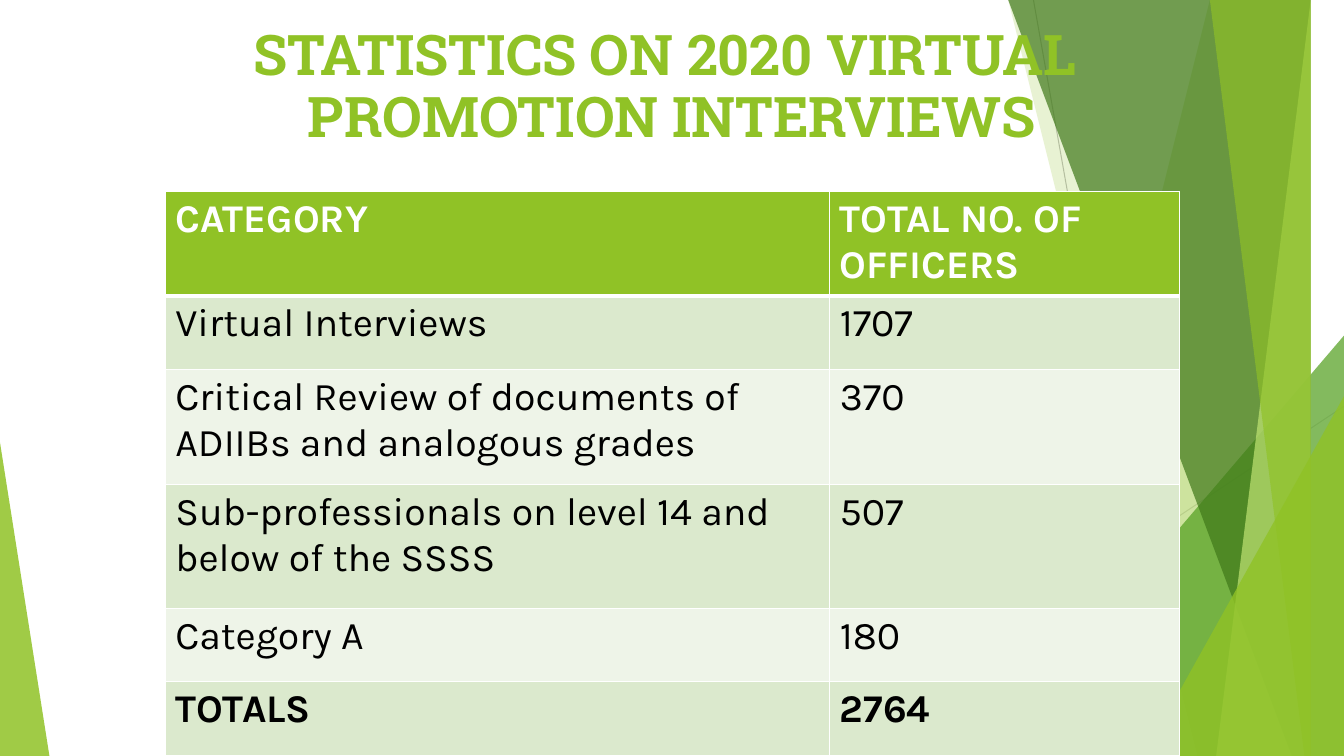
from lxml.etree import SubElement
from pptx import Presentation
from pptx.dml.color import RGBColor
from pptx.enum.shapes import MSO_CONNECTOR, MSO_SHAPE
from pptx.enum.text import MSO_ANCHOR, PP_ALIGN
from pptx.oxml import parse_xml
from pptx.oxml.ns import nsdecls, qn
from pptx.util import Inches, Pt

WIDTH, HEIGHT = 13.33, 7.5
BLEED_TOP = -0.01
COLORS = {
    "green": "90C226",
    "leaf": "54A021",
    "forest": "3F7819",
    "lime": "C0E474",
    "band_dark": "DBE9CD",
    "band_light": "EEF4E8",
    "line_dark": "BFBFBF",
    "line_light": "D9D9D9",
    "white": "FFFFFF",
    "black": "000000",
}
ROWS = [
    ("CATEGORY", "TOTAL NO. OF OFFICERS"),
    ("Virtual Interviews", "1707"),
    ("Critical Review of documents of ADIIBs and analogous grades", "370"),
    ("Sub-professionals on level 14 and below of the SSSS", "507"),
    ("Category A", "180"),
    ("TOTALS", "2764"),
]
ROW_HEIGHTS = [1.01, 0.73, 1.14, 1.23, 0.73, 0.73]
COLUMN_WIDTHS = [6.59, 3.47]


def rgb(name):
    return RGBColor.from_string(COLORS[name])


def add_line(page, start, end, color):
    line = page.shapes.add_connector(
        MSO_CONNECTOR.STRAIGHT, *[Inches(value) for value in (*start, *end)])
    line.line.color.rgb = rgb(color)
    line.line.width = Pt(0.75)
    SubElement(line.element.spPr, qn("a:effectLst"))


def paint(shape, color, opacity):
    """Give a shape a see-through fill with no outline or shadow."""
    shape.shadow.inherit = False
    shape.line.fill.background()
    shape.fill.solid()
    shape.fill.fore_color.rgb = rgb(color)
    fill_color = shape.element.spPr.find(qn("a:solidFill"))[0]
    SubElement(fill_color, qn("a:alpha"), val=str(opacity * 1000))


def add_panel(page, top_x, bottom_x, color, opacity):
    """Add a slanted panel that reaches the right edge of the slide."""
    outline = page.shapes.build_freeform(top_x, BLEED_TOP, scale=Inches(1))
    outline.add_line_segments(
        [(WIDTH, BLEED_TOP), (WIDTH, HEIGHT), (bottom_x, HEIGHT)], close=True)
    paint(outline.convert_to_shape(), color, opacity)


def add_corner(page, left, top, width, apex, color, opacity):
    """Add a triangle standing on the bottom edge of the slide."""
    triangle = page.shapes.add_shape(
        MSO_SHAPE.ISOSCELES_TRIANGLE, Inches(left), Inches(top),
        Inches(width), Inches(HEIGHT - top))
    triangle.adjustments[0] = apex
    paint(triangle, color, opacity)


def write(frame, text, font, size, color, bold=False, align=PP_ALIGN.LEFT,
          spacing=None):
    para = frame.paragraphs[0]
    para.text = text
    para.alignment = align
    para.line_spacing = spacing
    for span in para.runs:
        span.font.name = font
        span.font.size = Pt(size)
        span.font.bold = bold
        span.font.color.rgb = rgb(color)
    return para


def line_xml(tag, points):
    return parse_xml(
        f'<a:{tag} {nsdecls("a")} w="{Pt(points)}"><a:solidFill>'
        f'<a:srgbClr val="{COLORS["white"]}"/></a:solidFill></a:{tag}>')


def add_title(page, text):
    box = page.shapes.add_textbox(
        Inches(0), Inches(0.21), Inches(WIDTH), Inches(1.64))
    frame = box.text_frame
    frame.word_wrap = True
    frame.vertical_anchor = MSO_ANCHOR.TOP
    para = write(frame, text, font="Roboto Slab", size=40, color="green",
                 bold=True, align=PP_ALIGN.CENTER, spacing=0.92)
    for span in para.runs:
        span.font.language_id = None
        span.font.fill.solid()
        span.font.color.rgb = rgb("green")
        span.font._element.insert(0, line_xml("ln", 0.75))


def style_cell(cell, fill, top, bottom):
    cell.fill.solid()
    cell.fill.fore_color.rgb = rgb(fill)
    properties = cell._tc.get_or_add_tcPr()
    borders = {"lnL": 1, "lnR": 1, "lnT": top, "lnB": bottom}
    for index, (tag, points) in enumerate(borders.items()):
        properties.insert(index, line_xml(tag, points))


def add_statistics(page):
    table = page.shapes.add_table(
        len(ROWS), len(COLUMN_WIDTHS), Inches(1.64), Inches(1.9),
        Inches(sum(COLUMN_WIDTHS)), Inches(sum(ROW_HEIGHTS))).table
    for column, width in zip(table.columns, COLUMN_WIDTHS):
        column.width = Inches(width)
    for index, (values, height) in enumerate(zip(ROWS, ROW_HEIGHTS)):
        table.rows[index].height = Inches(height)
        header = index == 0
        band = "band_dark" if index % 2 else "band_light"
        for column, text in enumerate(values):
            cell = table.cell(index, column)
            write(cell.text_frame, text, font="Karla", size=28,
                  color="white" if header else "black",
                  bold=index in (0, len(ROWS) - 1))
            style_cell(cell, "green" if header else band,
                       top=3 if index == 1 else 1, bottom=3 if header else 1)


def add_background(page):
    add_line(page, (10.25, 0), (11.58, HEIGHT), "line_dark")
    add_line(page, (WIDTH, 4.03), (8.12, HEIGHT), "line_light")
    add_panel(page, 12.28, 10.04, "green", 30)
    add_panel(page, 10.5, 11.83, "green", 20)
    add_corner(page, 9.77, 3.33, 3.56, 1, "leaf", 72)
    add_panel(page, 10.21, 12.91, "forest", 70)
    add_panel(page, 13.03, 11.92, "lime", 70)
    add_panel(page, 11.96, 13.18, "green", 65)
    add_corner(page, 11.34, 3.93, 1.99, 1, "green", 80)
    add_corner(page, 0, 4.39, 0.49, 0, "green", 85)


def main():
    deck = Presentation()
    deck.slide_width = Inches(WIDTH)
    deck.slide_height = Inches(HEIGHT)
    page = deck.slides.add_slide(deck.slide_layouts[6])
    add_background(page)
    add_title(page, "STATISTICS ON 2020 VIRTUAL \vPROMOTION INTERVIEWS")
    add_statistics(page)
    deck.save("out.pptx")


if __name__ == "__main__":
    main()
